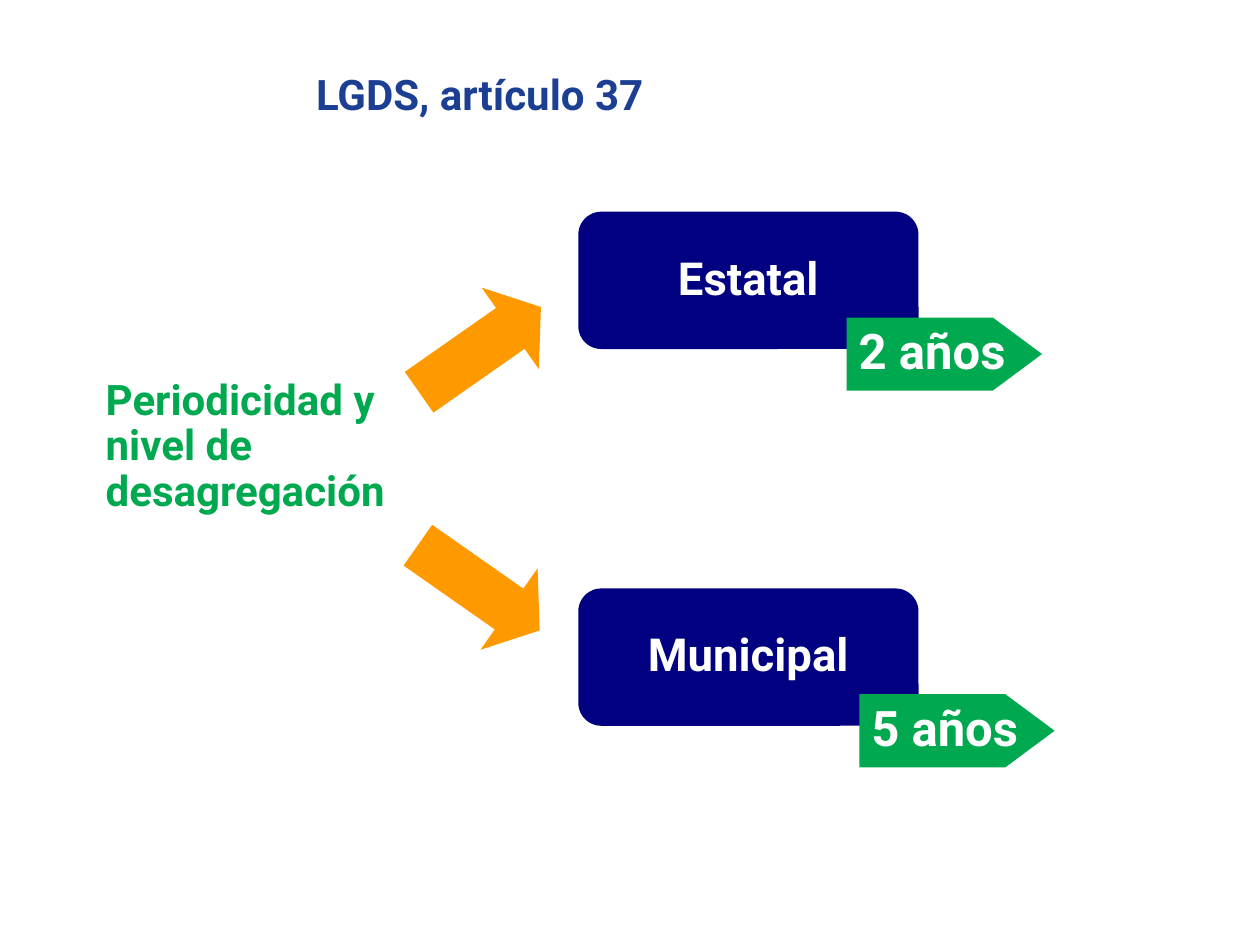
from pptx import Presentation
from pptx.dml.color import RGBColor
from pptx.enum.shapes import MSO_SHAPE
from pptx.enum.text import MSO_ANCHOR, PP_ALIGN
from pptx.util import Inches, Pt

FONT = "Roboto"
BLUE = RGBColor(0x1C, 0x3F, 0x94)
GREEN = RGBColor(0x00, 0xA9, 0x4F)
NAVY = RGBColor(0x00, 0x00, 0x80)
ORANGE = RGBColor(0xFF, 0x99, 0x00)
WHITE = RGBColor(0xFF, 0xFF, 0xFF)

CELL = Inches(0.1)
COLUMNS, ROWS = 100, 75


def grid(box):
    return [round(cells * CELL) for cells in box]


def write(shape, text, size, color, alignment=PP_ALIGN.LEFT):
    shape.text_frame.text = text
    paragraph = shape.text_frame.paragraphs[0]
    paragraph.alignment = alignment
    paragraph.line_spacing = 0.9
    font = paragraph.runs[0].font
    font.name = FONT
    font.size = Pt(size)
    font.bold = True
    font.color.rgb = color


def add_heading(slide, box, text, color):
    heading = slide.shapes.add_textbox(*grid(box))
    heading.text_frame.word_wrap = True
    write(heading, text, 24, color)


def add_block(slide, kind, box, color, adjustments):
    block = slide.shapes.add_shape(kind, *grid(box))
    for index, value in enumerate(adjustments):
        block.adjustments[index] = value
    block.shadow.inherit = False
    block.fill.solid()
    block.fill.fore_color.rgb = color
    block.line.fill.background()
    return block


def add_label(slide, kind, box, color, adjustment, text, size):
    label = add_block(slide, kind, box, color, [adjustment])
    frame = label.text_frame
    frame.margin_left = frame.margin_right = 0
    frame.word_wrap = False
    frame.vertical_anchor = MSO_ANCHOR.MIDDLE
    write(label, text, size, WHITE, PP_ALIGN.CENTER)


def add_arrow(slide, box, rotation):
    arrow = add_block(slide, MSO_SHAPE.RIGHT_ARROW, box, ORANGE, [0.5, 0.375])
    arrow.rotation = rotation


def add_level(slide, box, name, period, period_offset):
    left, top, width, height = box
    add_label(slide, MSO_SHAPE.ROUNDED_RECTANGLE, box, NAVY, 0.167, name, 26)
    period_box = (left + period_offset, top + 8.4, 15.5, 5.8)
    add_label(slide, MSO_SHAPE.PENTAGON, period_box, GREEN, 0.674, period, 28)


def main():
    presentation = Presentation()
    presentation.slide_width = COLUMNS * CELL
    presentation.slide_height = ROWS * CELL
    slide = presentation.slides.add_slide(presentation.slide_layouts[6])

    add_heading(slide, (24.1, 5.4, 70.1, 4.6), "LGDS, artículo 37", BLUE)
    add_heading(slide, (7.4, 29.6, 28.1, 11.8),
                "Periodicidad y nivel de desagregación", GREEN)
    add_arrow(slide, (32.2, 23.8, 11.8, 7.9), 325)
    add_level(slide, (45.9, 16.8, 27, 10.9), "Estatal", "2 años", 21.3)
    add_level(slide, (45.9, 46.7, 27, 10.9), "Municipal", "5 años", 22.3)
    add_arrow(slide, (32.1, 42.7, 11.8, 7.9), 35)

    presentation.save("out.pptx")


if __name__ == "__main__":
    main()
